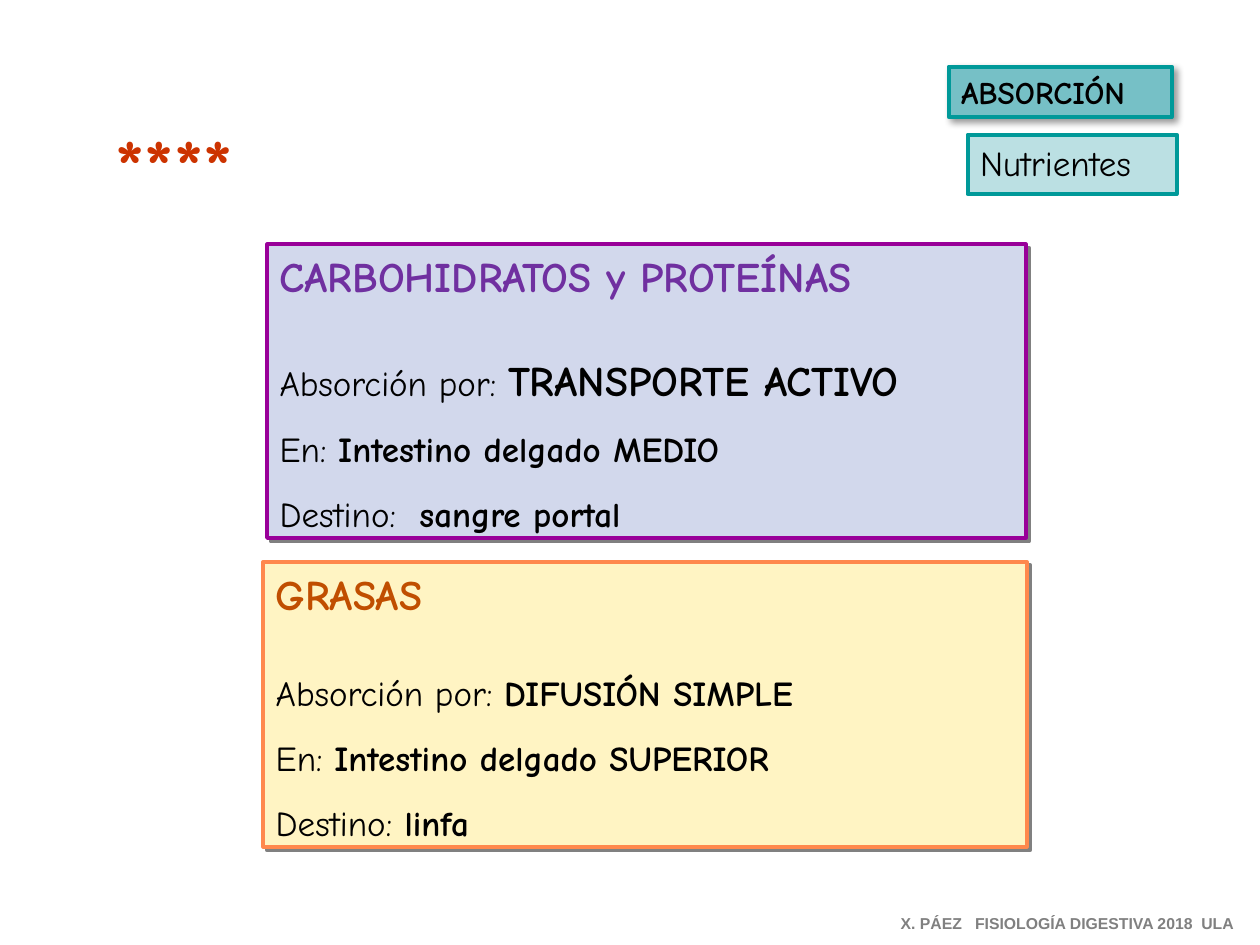
from lxml.etree import SubElement
from pptx import Presentation
from pptx.dml.color import RGBColor
from pptx.enum.shapes import MSO_SHAPE
from pptx.enum.text import MSO_ANCHOR, PP_ALIGN
from pptx.oxml.ns import qn
from pptx.util import Inches, Pt

COLORS = {
    "black": "000000", "gray": "808080", "red": "CC3300",
    "teal": "009999", "tag": "76C0C6", "subtag": "BBE0E3",
    "purple_line": "990099", "purple": "7030A0", "lavender": "D2D8EC",
    "orange_line": "FF884D", "orange": "C04E00", "cream": "FFF4C3",
}
FONT = "Comic Neue"


def rgb(name):
    return RGBColor.from_string(COLORS[name])


def add_shadow(effects, color, alpha, blur, dist):
    """Append a shadow that falls to the lower right."""
    shadow = SubElement(effects, qn("a:outerShdw"), blurRad=str(Pt(blur)),
                        dist=str(Pt(dist)), dir="2700000", algn="tl", rotWithShape="0")
    clr = SubElement(shadow, qn("a:srgbClr"), val=COLORS[color])
    SubElement(clr, qn("a:alpha"), val=str(alpha * 1000))


def add_box(s, box, fill, line, shadow=None):
    sp = s.shapes.add_shape(MSO_SHAPE.RECTANGLE, *map(Inches, box))
    sp.fill.solid()
    sp.fill.fore_color.rgb = rgb(fill)
    sp.line.color.rgb = rgb(line)
    sp.line.width = Pt(2.25)
    sp.shadow.inherit = False
    if shadow:
        add_shadow(sp._element.spPr.find(qn("a:effectLst")), *shadow)
    tf = sp.text_frame
    tf.word_wrap = True
    tf.vertical_anchor = MSO_ANCHOR.TOP
    return tf


def add_run(p, text, size, color="black", bold=False, font=FONT):
    p.alignment = PP_ALIGN.LEFT
    r = p.add_run()
    r.text = text
    r.font.size = Pt(size)
    r.font.bold = bold
    r.font.color.rgb = rgb(color)
    r.font.name = font
    return r


def add_label(s, box, text, size, font=FONT, color="black"):
    tf = s.shapes.add_textbox(*map(Inches, box)).text_frame
    tf.word_wrap = True
    return add_run(tf.paragraphs[0], text, size, color, True, font)


def add_tags(s, left, top):
    """Topic tag with the subtopic tag below it."""
    tf = add_box(s, (left, top, 1.77, 0.4), "tag", "teal", ("black", 40, 4, 3))
    add_run(tf.paragraphs[0], "ABSORCIÓN", 18, bold=True)
    tf = add_box(s, (left + 0.15, top + 0.54, 1.66, 0.47), "subtag", "teal")
    add_run(tf.paragraphs[0], "Nutrientes", 20)


def add_nutrient_panel(s, box, fill, line, title, title_color, facts):
    """Framed panel: a title, then one label and value per line."""
    tf = add_box(s, box, fill, line, ("gray", 100, 0, 2.8))
    add_run(tf.paragraphs[0], title, 24, title_color, True)
    for i, (label, value, size) in enumerate(facts):
        p = tf.add_paragraph()
        p.space_before = Pt(13 if i else 30.5)
        add_run(p, label, 20)
        add_run(p, value, size, bold=True)


def add_stars(s, box):
    """Importance mark with shadowed text."""
    r = add_label(s, box, "****", 44, color="red")
    rPr = r.font._element
    effects = SubElement(rPr, qn("a:effectLst"))
    rPr.find(qn("a:solidFill")).addnext(effects)
    add_shadow(effects, "black", 100, 0, 3)


def main():
    prs = Presentation()
    prs.slide_width, prs.slide_height = Inches(10), Inches(7.5)
    s = prs.slides.add_slide(prs.slide_layouts[6])

    add_tags(s, 7.53, 0.53)
    add_nutrient_panel(
        s, (2.09, 4.46, 6.06, 2.26), "cream", "orange_line", "GRASAS", "orange",
        [("Absorción por: ", "DIFUSIÓN SIMPLE", 20),
         ("En: ", "Intestino delgado SUPERIOR", 20),
         ("Destino:", " linfa", 20)])
    add_nutrient_panel(
        s, (2.12, 1.94, 6.02, 2.33), "lavender", "purple_line",
        "CARBOHIDRATOS y PROTEÍNAS", "purple",
        [("Absorción por: ", "TRANSPORTE ACTIVO", 24),
         ("En: ", "Intestino delgado MEDIO", 20),
         ("Destino:  ", "sangre portal", 20)])
    add_stars(s, (0.82, 0.88, 1.72, 0.84))

    # Footer
    add_label(s, (7.05, 7.2, 2.96, 0.25), "X. PÁEZ   FISIOLOGÍA DIGESTIVA 2018  ULA",
              9, "Arial", "gray")
    prs.save("out.pptx")


if __name__ == "__main__":
    main()
